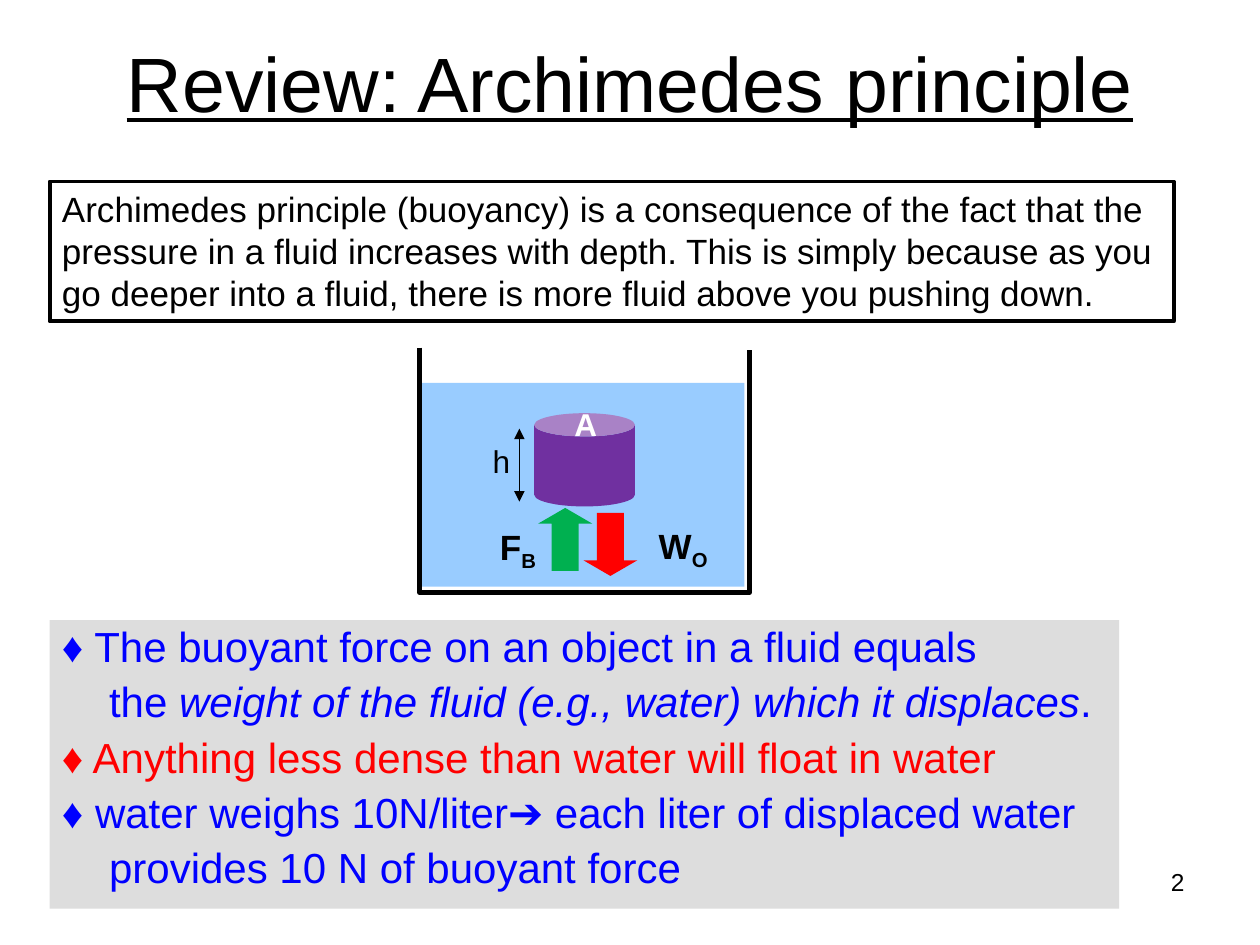
from dataclasses import dataclass

from lxml.etree import SubElement
from pptx import Presentation
from pptx.dml.color import RGBColor as RGB
from pptx.enum.shapes import MSO_CONNECTOR as Link, MSO_SHAPE as Kind
from pptx.enum.text import MSO_ANCHOR as Anchor, PP_ALIGN as Align
from pptx.oxml.ns import qn
from pptx.util import Cm, Pt


@dataclass(frozen=True)
class Theme:
    font: str = "Arial"
    black: str = "000000"
    white: str = "FFFFFF"
    blue: str = "0000FF"
    red: str = "FF0000"
    green: str = "00B050"
    violet: str = "7030A0"
    water: str = "99CCFF"
    panel: str = "DDDDDD"
    title: int = 44
    point: int = 24
    text: int = 20
    label: int = 18
    small: int = 14


T = Theme()


def area(x, y, w, h):
    return Cm(x), Cm(y), Cm(w), Cm(h)


def add_run(para, text, size, color=T.black, bold=False, italic=False):
    run = para.add_run()
    run.text = text
    font = run.font
    font.name, font.size = T.font, Pt(size)
    font.bold, font.italic = bold, italic
    font.color.rgb = RGB.from_string(color)
    return run


def add_part(shapes, kind, box, fill=None, line=None, width=1):
    part = shapes.add_shape(kind, *area(*box))
    paint(part, fill, line, width)
    return part


def paint(part, fill=None, line=None, width=1):
    part.shadow.inherit = False
    if fill:
        part.fill.solid()
        part.fill.fore_color.rgb = RGB.from_string(fill)
    else:
        part.fill.background()
    if line:
        part.line.color.rgb = RGB.from_string(line)
        part.line.width = Pt(width)
    else:
        part.line.fill.background()


def add_label(shapes, box, text, size, color=T.black, bold=False, sub=""):
    frame = shapes.add_textbox(*area(*box)).text_frame
    frame.word_wrap = False
    para = frame.paragraphs[0]
    add_run(para, text, size, color, bold)
    if sub:
        low = add_run(para, sub, size, color, bold)
        low.font._element.set("baseline", "-25000")


def add_title(slide, box):
    title = slide.shapes.title
    title.left, title.top, title.width, title.height = area(*box)
    frame = title.text_frame
    frame.vertical_anchor = Anchor.MIDDLE
    para = frame.paragraphs[0]
    para.alignment = Align.CENTER
    add_run(para, "Review: Archimedes principle", T.title).font.underline = True


def add_claim(slide, box):
    part = add_part(slide.shapes, Kind.RECTANGLE, box, line=T.black, width=2.25)
    frame = part.text_frame
    frame.word_wrap = False
    frame.vertical_anchor = Anchor.TOP
    first, second = frame.paragraphs[0], frame.add_paragraph()
    first.alignment = second.alignment = Align.LEFT
    add_run(first, "Archimedes principle (buoyancy) is a consequence of the fact that the", T.text)
    add_run(second, "pressure in a fluid increases with depth. This is simply because as you", T.text)
    second.add_line_break()
    add_run(second, "go deeper into a fluid, there is more fluid above you pushing down.", T.text)


def add_tank(slide, box):
    """Draw the submerged cylinder and the two forces on it."""
    x, y, w, h = box
    shapes = slide.shapes.add_group_shape().shapes

    def at(dx, dy, pw, ph):
        return x + dx, y + dy, pw, ph

    wall = shapes.build_freeform(Cm(x), Cm(y))
    corners = [(0, h), (w, h), (w, 0.05)]
    wall.add_line_segments([(Cm(x + dx), Cm(y + dy)) for dx, dy in corners], close=False)
    paint(wall.convert_to_shape(), line=T.black, width=3)

    add_part(shapes, Kind.RECTANGLE, at(0.05, 0.71, 6.5, 4.11), T.water)
    forces = [(2.39, 3.23, T.green, 0), (3.3, 3.33, T.red, 180)]
    for dx, dy, color, turn in forces:
        arrow = add_part(shapes, Kind.UP_ARROW, at(dx, dy, 1.09, 1.27), color)
        arrow.adjustments[1] = 0.29
        arrow.rotation = turn
    add_label(shapes, at(4.57, 3.43, 1.52, 1.09), "W", T.text, bold=True, sub="O")
    add_label(shapes, at(1.37, 3.45, 1.27, 1.09), "F", T.text, bold=True, sub="B")

    add_part(shapes, Kind.CAN, at(2.31, 1.32, 2.03, 1.88), T.violet)
    add_label(shapes, at(2.87, 1.04, 0.79, 1.02), "A", T.label, T.white, bold=True)

    mid = Cm(x + 2.01)
    span = shapes.add_connector(Link.STRAIGHT, mid, Cm(y + 1.63), mid, Cm(y + 3.1))
    span.line.color.rgb = RGB.from_string(T.black)
    span.line.width = Pt(0.75)
    line = span.line._get_or_add_ln()
    for end in ("a:headEnd", "a:tailEnd"):
        SubElement(line, qn(end), type="triangle")
    SubElement(span._element.spPr, qn("a:effectLst"))
    add_label(shapes, at(1.22, 1.78, 0.86, 1.02), "h", T.label)


def add_points(slide, box):
    frame = add_part(slide.shapes, Kind.RECTANGLE, box, T.panel).text_frame
    frame.word_wrap = True
    frame.vertical_anchor = Anchor.TOP
    # Each line: hanging or not, colour, runs as (text, italic)
    lines = [
        (True, T.blue, [("♦ The buoyant force on an object in a fluid equals", False)]),
        (False, T.blue, [("the ", False),
                         ("weight of the fluid (e.g., water) which it displaces", True),
                         (".", False)]),
        (True, T.red, [("♦ Anything less dense than water will float in water", False)]),
        (True, T.blue, [("♦ water weighs 10N/liter➔ each liter of displaced water", False)]),
        (False, T.blue, [("provides 10 N of buoyant force", False)]),
    ]
    for i, (hang, color, runs) in enumerate(lines):
        para = frame.add_paragraph() if i else frame.paragraphs[0]
        para.alignment = Align.LEFT
        para.line_spacing = 0.9
        para.space_before = Pt(5.7)
        props = para._p.get_or_add_pPr()
        props.set("marL", str(Cm(0.95)))
        props.set("indent", str(Cm(-0.95 if hang else 0)))
        for text, italic in runs:
            add_run(para, text, T.point, color, italic=italic)


def add_number(slide, box):
    frame = slide.shapes.add_textbox(*area(*box)).text_frame
    frame.word_wrap = True
    para = frame.paragraphs[0]
    para.alignment = Align.RIGHT
    add_run(para, "2", T.small)


def main():
    deck = Presentation()
    deck.slide_width, deck.slide_height = Cm(25.4), Cm(19.05)
    slide = deck.slides.add_slide(deck.slide_layouts[5])
    add_title(slide, (0, 0.05, 25.4, 3.18))
    add_points(slide, (1, 12.5, 21.56, 5.82))
    add_tank(slide, (8.46, 7.01, 6.65, 4.93))
    add_number(slide, (18.21, 17.35, 5.92, 1.32))
    add_claim(slide, (1, 3.66, 22.66, 2.82))
    deck.save("out.pptx")


if __name__ == "__main__":
    main()
